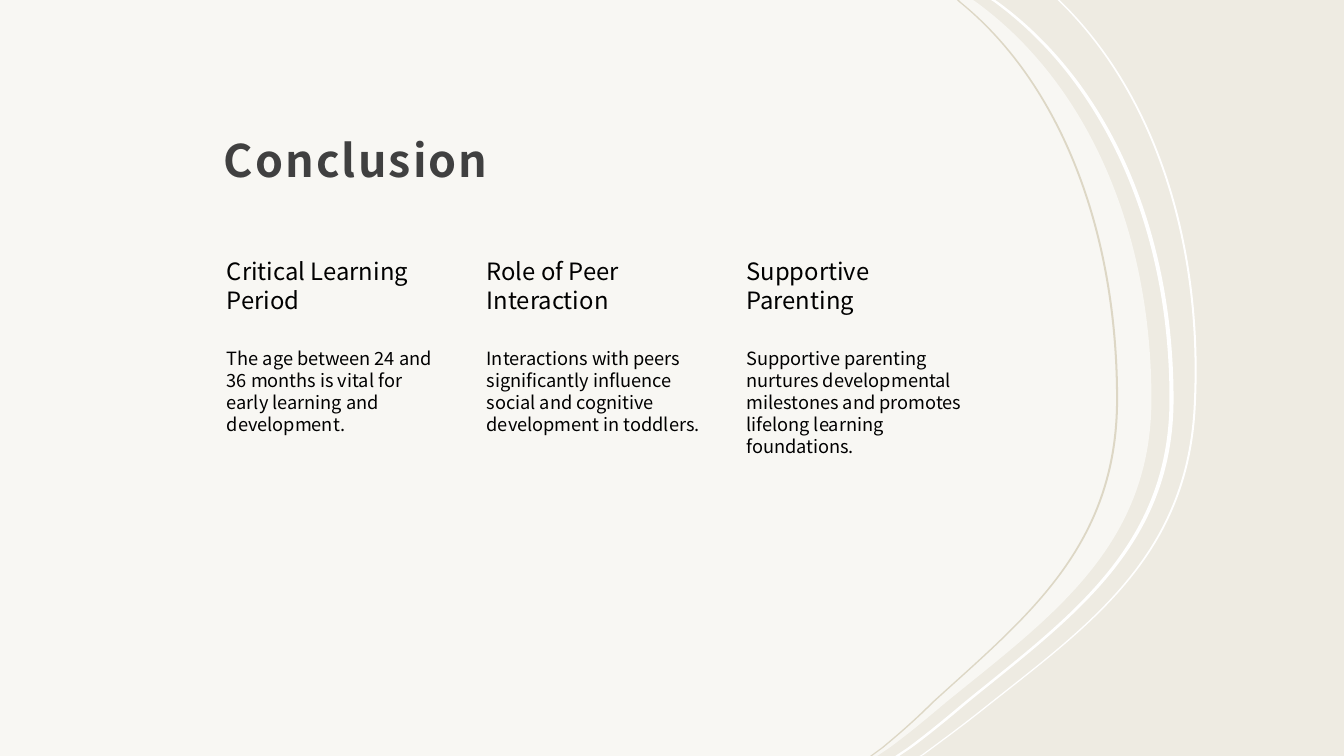
from dataclasses import dataclass

from lxml import etree
from pptx import Presentation
from pptx.dml.color import RGBColor
from pptx.enum.text import MSO_ANCHOR
from pptx.oxml.ns import qn
from pptx.util import Inches, Pt

TOP, BOTTOM = MSO_ANCHOR.TOP, MSO_ANCHOR.BOTTOM


@dataclass(frozen=True)
class Theme:
    font: str = "Noto Sans CJK JP"
    back: str = "EEEBE2"
    white: str = "FFFFFF"
    sand: str = "DDD7C5"
    title: str = "404040"
    ink: str = "000000"
    title_size: int = 32
    head_size: int = 17
    body_size: int = 13


THEME = Theme()
WIDE, HIGH = 13.33, 7.5

# Each edge: start, short line, three Bezier curves, end
PANEL = [(9.65, 0), (9.68, 0.02),
         (10.79, 0.83), (11.42, 2.29), (11.42, 3.96),
         (11.42, 5.43), (10.41, 6.13), (9.38, 6.97),
         (9.19, 7.13), (9.01, 7.28), (8.82, 7.42), (8.7, 7.5)]
OUTER = [(10.51, 0), (10.54, 0.03),
         (11.46, 0.94), (11.94, 2.4), (11.86, 4.02),
         (11.79, 5.55), (10.77, 6.23), (9.73, 7.06),
         (9.54, 7.21), (9.35, 7.35), (9.16, 7.49), (9.14, 7.5)]
INNER = [(9.51, 0), (9.53, 0.02),
         (10.53, 0.83), (11.09, 2.29), (11.09, 3.96),
         (11.09, 5.43), (10.18, 6.13), (9.26, 6.97),
         (9.1, 7.13), (8.93, 7.28), (8.76, 7.42), (8.65, 7.5)]
# Edge, shifts of its right and left sides, colour
BANDS = [(OUTER, 0, -0.02, THEME.white),
         (PANEL, 0.22, 0.18, THEME.white),
         (INNER, 0, -0.02, THEME.sand)]

POINTS = [
    ("Critical Learning Period",
     "The age between 24 and 36 months is vital for early learning "
     "and development."),
    ("Role of Peer Interaction",
     "Interactions with peers significantly influence social and "
     "cognitive development in toddlers."),
    ("Supportive Parenting",
     "Supportive parenting nurtures developmental milestones and "
     "promotes lifelong learning foundations."),
]


def trace(edge, shift=0, back=False):
    """Split a shifted edge into steps: one point a line, three a curve."""
    dots = [(x + shift, y) for x, y in edge]
    if back:
        dots.reverse()
    curves = [dots[i:i + 3] for i in (2, 5, 8)]
    return [dots[:1], dots[1:2], *curves, dots[-1:]]


def bend(shape, steps):
    """Turn the lines of three-point steps into Bezier curves."""
    lines = list(shape._element.iter(qn("a:lnTo")))
    for line, step in zip(lines, steps[1:]):
        if len(step) == 1:
            continue
        line.tag = qn("a:cubicBezTo")
        for n, (x, y) in enumerate(step[:2]):
            knob = etree.Element(qn("a:pt"))
            knob.set("x", str(Inches(x) - shape.left))
            knob.set("y", str(Inches(y) - shape.top))
            line.insert(n, knob)


def draw_shape(group, steps, color, alpha=None):
    spots = [tuple(map(Inches, step[-1])) for step in steps]
    pen = group.shapes.build_freeform(*spots[0])
    pen.add_line_segments(spots[1:], close=True)
    shape = pen.convert_to_shape()
    curved = etree.fromstring(etree.tostring(shape._element)) is not None
    if curved:
        swap_lines(shape, steps)
    shape.shadow.inherit = False
    shape.line.fill.background()
    shape.fill.solid()
    shape.fill.fore_color.rgb = RGBColor.from_string(color)
    if alpha:
        tint = shape.fill._xPr.find(".//" + qn("a:srgbClr"))
        etree.SubElement(tint, qn("a:alpha")).set("val", str(alpha * 1000))


def swap_lines(shape, steps):
    bend(shape, steps)


def add_text(shapes, box, text, size, color, pad, anchor=TOP, lead=1.0):
    """Add a text box with one run and return the run."""
    frame = shapes.add_textbox(*map(Inches, box)).text_frame
    frame.word_wrap = True
    frame.vertical_anchor = anchor
    (frame.margin_left, frame.margin_top,
     frame.margin_right, frame.margin_bottom) = map(Inches, pad)
    para = frame.paragraphs[0]
    para.line_spacing = lead
    run = para.add_run()
    run.text = text
    run.font.name = THEME.font
    run.font.size = Pt(size)
    run.font.color.rgb = RGBColor.from_string(color)
    return run


def draw_back(slide):
    fill = slide.background.fill
    fill.solid()
    fill.fore_color.rgb = RGBColor.from_string(THEME.back)
    group = slide.shapes.add_group_shape()
    # Pale panel, then the thin bands along its edge
    panel = [[(0, 0)], *trace(PANEL), [(0, HIGH)]]
    draw_shape(group, panel, THEME.white, 60)
    for edge, right, left, color in BANDS:
        draw_shape(group, trace(edge, right) + trace(edge, left, True), color)


def draw_title(slide, box):
    run = add_text(slide.shapes, box, "Conclusion", THEME.title_size,
                   THEME.title, (0.12, 0.12, 0.12, 0.1), BOTTOM, 1.3)
    run.font.bold = True
    run.font._element.set("spc", "150")


def draw_points(slide, box, gap=0.24, head=0.9):
    left, top, width, height = box
    cell = (width - gap * (len(POINTS) - 1)) / len(POINTS)
    pad = (0.15, 0.02, 0.02, 0.02)
    group = slide.shapes.add_group_shape()
    for i, (name, body) in enumerate(POINTS):
        x = left + i * (cell + gap)
        add_text(group.shapes, (x, top, cell, head), name,
                 THEME.head_size, THEME.ink, pad)
        add_text(group.shapes, (x, top + head, cell, height - head), body,
                 THEME.body_size, THEME.ink, pad)


def main():
    deck = Presentation()
    deck.slide_width, deck.slide_height = Inches(WIDE), Inches(HIGH)
    slide = deck.slides.add_slide(deck.slide_layouts[6])
    draw_back(slide)
    draw_title(slide, (2.1, 0.48, 7.5, 1.47))
    draw_points(slide, (2.1, 2.53, 7.49, 3.96))
    deck.save("out.pptx")


if __name__ == "__main__":
    main()
